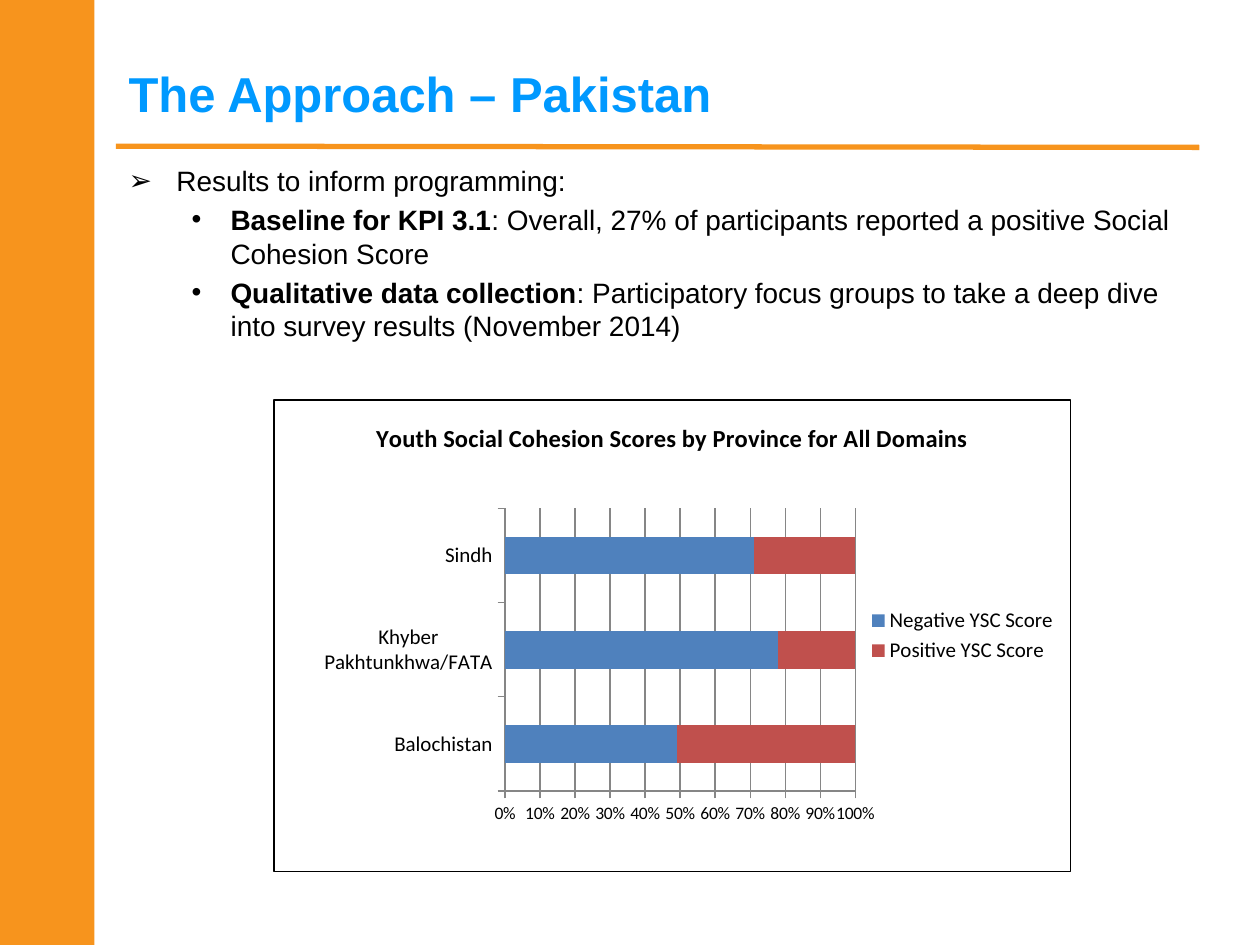
"""Build the Pakistan approach slide with a chart of scores by province."""
from lxml import etree
from pptx import Presentation
from pptx.chart.data import CategoryChartData as Data
from pptx.dml.color import RGBColor
from pptx.enum.chart import XL_CHART_TYPE as Kind, XL_LEGEND_POSITION as Spot, XL_TICK_MARK as Tick
from pptx.enum.shapes import MSO_CONNECTOR as Link, MSO_SHAPE as Form
from pptx.enum.text import MSO_ANCHOR as Anchor, MSO_AUTO_SIZE as Fit, PP_ALIGN as Align
from pptx.oxml import parse_xml
from pptx.oxml.ns import qn
from pptx.util import Inches, Pt

SPACE = ('xmlns:a="http://schemas.openxmlformats.org/drawingml/2006/main" '
         'xmlns:c="http://schemas.openxmlformats.org/drawingml/2006/chart"')


def paint(part, tone):
    part.solid()
    part.fore_color.rgb = RGBColor.from_string(tone)


def style(font, tone="000000", **form):
    paint(font.fill, tone)
    for key, value in form.items():
        setattr(font, key, value)


deck = Presentation()
deck.slide_width, deck.slide_height = Inches(10), Inches(7.5)
slide = deck.slides.add_slide(deck.slide_layouts[1])
shapes = slide.shapes
title, body = slide.placeholders

band = shapes.add_shape(Form.RECTANGLE, 0, 0, Inches(0.75), Inches(7.5))
band.shadow.inherit = False
paint(band.fill, "F7941D")
band.line.fill.background()

rule = shapes.add_connector(Link.STRAIGHT, Inches(0.92), Inches(1.16), Inches(9.52), Inches(1.17))
paint(rule.line.fill, "F7941D")
rule.line.width = Pt(3)
etree.SubElement(rule.element.spPr, qn("a:effectLst"))

for holder, top, height, anchor in ((title, 0.3, 0.87, Anchor.MIDDLE), (body, 1.25, 5.75, Anchor.TOP)):
    holder.left, holder.top = Inches(0.92), Inches(top)
    holder.width, holder.height = Inches(8.58), Inches(height)
    frame = holder.text_frame
    for key, value in {"auto_size": Fit.NONE, "word_wrap": True, "vertical_anchor": anchor}.items():
        setattr(frame, key, value)

head = title.text_frame.paragraphs[0]
head.alignment = Align.LEFT
run = head.add_run()
run.text = "The Approach – Pakistan"
style(run.font, "0099FF", name="Arial", size=Pt(28), bold=True)

points = [
    (0, "➢", 0.38, 0.38, "", "Results to inform programming:"),
    (1, "•", 0.81, 0.31, "Baseline for KPI 3.1",
     ": Overall, 27% of participants reported a positive Social Cohesion Score"),
    (1, "•", 0.81, 0.31, "Qualitative data collection",
     ": Participatory focus groups to take a deep dive into survey results (November 2014)"),
]
frame = body.text_frame
for index, (level, mark, left, hang, lead, rest) in enumerate(points):
    para = frame.add_paragraph() if index else frame.paragraphs[0]
    para.level = level
    para.space_before = Pt(3)
    props = para._p.get_or_add_pPr()
    props.set("marL", str(Inches(left)))
    props.set("indent", str(-Inches(hang)))
    etree.SubElement(props, qn("a:buChar"), char=mark)
    for text, bold in ((lead, True), (rest, False)):
        if text:
            run = para.add_run()
            run.text = text
            style(run.font, name="Arial", size=Pt(16), bold=bold)

data = Data(number_format="General")
data.categories = ["Balochistan", "Khyber Pakhtunkhwa/FATA", "Sindh"]
data.add_series("Negative YSC Score", [49, 78, 71])
data.add_series("Positive YSC Score", [51, 22, 29])
chart = shapes.add_chart(Kind.BAR_STACKED_100, Inches(2.17), Inches(3.17),
                         Inches(6.33), Inches(3.75), data).chart
style(chart.font, name="Calibri", size=Pt(10))

chart.has_title = True
run = chart.chart_title.text_frame.paragraphs[0].add_run()
run.text = "Youth Social Cohesion Scores by Province for All Domains"
style(run.font, name="Calibri", size=Pt(14), bold=True)
chart.chart_title.include_in_layout = False

chart.has_legend = True
legend = chart.legend
legend.position = Spot.RIGHT
legend.include_in_layout = False
style(legend.font, name="Calibri", size=Pt(12))

plot = chart.plots[0]
for key, value in {"gap_width": 150, "overlap": 100, "vary_by_categories": False}.items():
    setattr(plot, key, value)
for series, tone in zip(plot.series, ("4F81BD", "C0504D")):
    paint(series.format.fill, tone)

cats, scale = chart.category_axis, chart.value_axis
for axis, size in ((cats, 12), (scale, 10)):
    axis.major_tick_mark = Tick.OUTSIDE
    axis.minor_tick_mark = Tick.NONE
    style(axis.tick_labels.font, name="Calibri", size=Pt(size))
    paint(axis.format.line.fill, "868686")
cats.has_major_gridlines = False
scale.has_major_gridlines = True
paint(scale.major_gridlines.format.line.fill, "868686")
scale.maximum_scale, scale.minimum_scale, scale.major_unit = 1, 0, 0.1
scale.tick_labels.number_format = "0%"
scale.tick_labels.number_format_is_linked = False

area = chart.element.find(".//" + qn("c:plotArea"))
for old in area.findall(qn("c:layout")):
    area.remove(old)
sizes = "".join(f'<c:{key} val="{value}"/>' for key, value in (
    ("layoutTarget", "inner"), ("xMode", "edge"), ("yMode", "edge"),
    ("x", 0.29), ("y", 0.23), ("w", 0.44), ("h", 0.6)))
area.insert(0, parse_xml(f"<c:layout {SPACE}><c:manualLayout>{sizes}</c:manualLayout></c:layout>"))
chart.element.find(qn("c:chart")).addnext(parse_xml(
    f'<c:spPr {SPACE}><a:noFill/><a:ln w="{Pt(0.75)}"><a:solidFill>'
    '<a:srgbClr val="000000"/></a:solidFill></a:ln></c:spPr>'))

deck.save("out.pptx")
